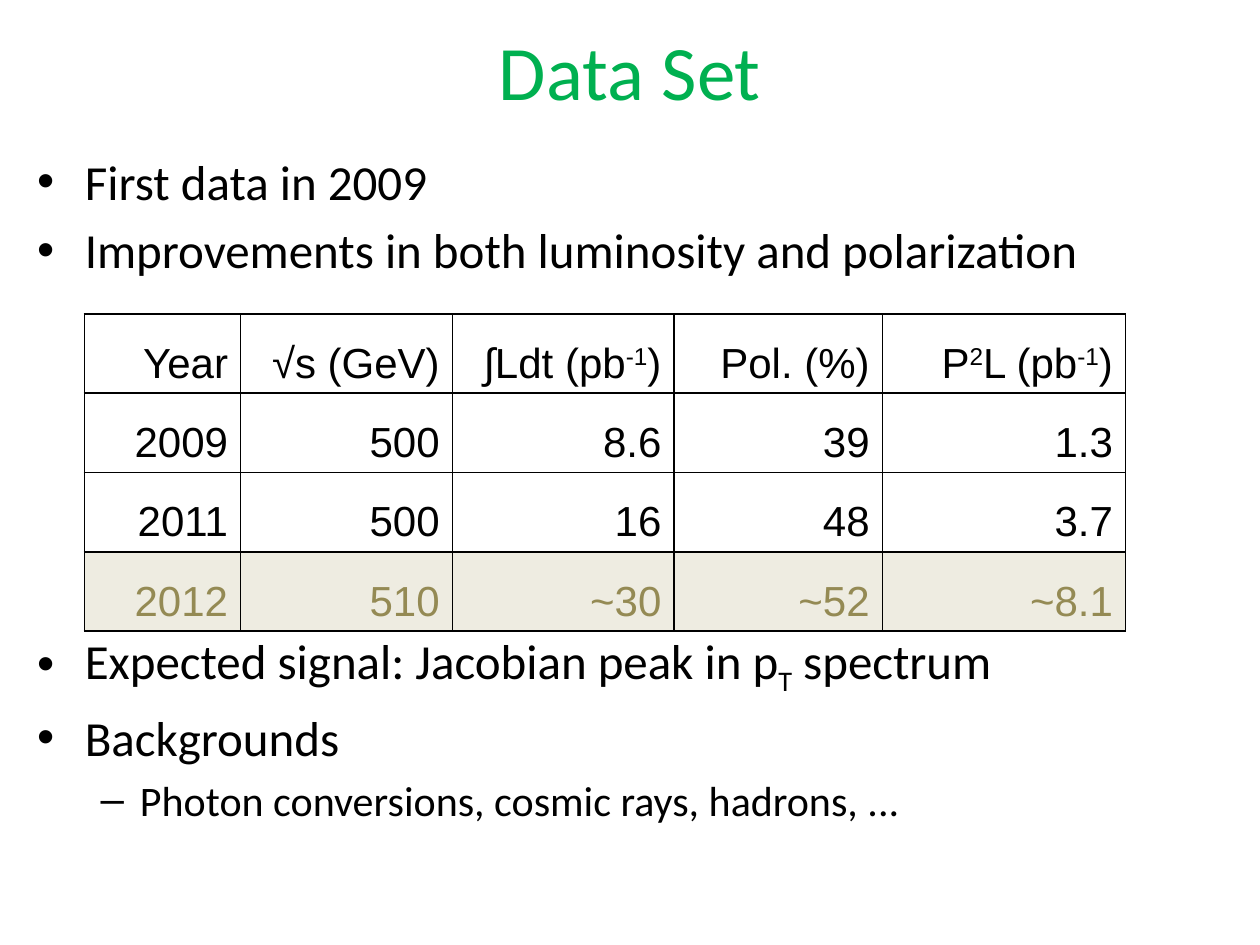
"""Build the Data Set slide: title, bullet list and luminosity table."""
import lxml.etree
import pptx
import pptx.dml.color
import pptx.enum.text
import pptx.oxml.ns
import pptx.util

Pt = pptx.util.Pt
ALIGN = pptx.enum.text.PP_ALIGN
ANCHOR = pptx.enum.text.MSO_ANCHOR


def rgb(value):
    return pptx.dml.color.RGBColor.from_string(value)


def write(paragraph, pieces, color, **formats):
    for piece in pieces:
        text, baseline = piece if isinstance(piece, tuple) else (piece, 0)
        run = paragraph.add_run()
        run.text = text
        for name, value in formats.items():
            setattr(run.font, name, value)
        run.font.color.rgb = rgb(color)
        if baseline:
            run._r.get_or_add_rPr().set("baseline", str(baseline * 1000))


qn = pptx.oxml.ns.qn
deck = pptx.Presentation()
deck.slide_width, deck.slide_height = Pt(720), Pt(540)
slide = deck.slides.add_slide(deck.slide_layouts[6])

heading = slide.shapes.add_textbox(Pt(36), Pt(3.6), Pt(648), Pt(72.7)).text_frame
for name, value in {"word_wrap": True, "vertical_anchor": ANCHOR.MIDDLE}.items():
    setattr(heading, name, value)
heading.paragraphs[0].alignment = ALIGN.CENTER
write(heading.paragraphs[0], ["Data Set"], "00B050", name="Calibri", size=Pt(44))

points = slide.shapes.add_textbox(Pt(14.4), Pt(82.8), Pt(669.6), Pt(448)).text_frame
points.word_wrap = True
levels = [
    {"mark": "•", "size": 28, "left": 27, "hang": 27},
    {"mark": "–", "size": 24, "left": 58.5, "hang": 22.5},
]
TABLE_GAP = 201
bullets = [
    (0, 0, ["First data in 2009"]),
    (0, 5.6, ["Improvements in both luminosity and polarization"]),
    (0, TABLE_GAP, ["Expected signal: Jacobian peak in p", ("T", -25), " spectrum"]),
    (0, 5.6, ["Backgrounds"]),
    (1, 4.8, ["Photon conversions, cosmic rays, hadrons, ..."]),
]
for index, (level, gap, pieces) in enumerate(bullets):
    point = points.add_paragraph() if index else points.paragraphs[0]
    look = levels[level]
    point.level = level
    properties = point._p.get_or_add_pPr()
    properties.set("marL", str(Pt(look["left"])))
    properties.set("indent", str(-Pt(look["hang"])))
    lxml.etree.SubElement(properties, qn("a:buFont")).set("typeface", "Arial")
    lxml.etree.SubElement(properties, qn("a:buChar")).set("char", look["mark"])
    point.space_before = Pt(gap)
    write(point, pieces, "000000", name="Calibri", size=Pt(look["size"]))

rows = [
    (["Year"], ["√s (GeV)"], ["∫Ldt (pb", ("-1", 30), ")"], ["Pol. (%)"],
     ["P", ("2", 30), "L (pb", ("-1", 30), ")"]),
    (["2009"], ["500"], ["8.6"], ["39"], ["1.3"]),
    (["2011"], ["500"], ["16"], ["48"], ["3.7"]),
    (["2012"], ["510"], ["~30"], ["~52"], ["~8.1"]),
]
row_colors = [("FFFFFF", "000000")] * 3 + [("EEECE1", "948A54")]
widths = [89.3, 121, 126.7, 119, 139]
row_height = 45.36
runs_table = slide.shapes.add_table(
    len(rows), len(widths), Pt(48.2), Pt(179.3), Pt(sum(widths)), Pt(row_height * len(rows))
).table
runs_table.first_row = runs_table.horz_banding = False
for column, width in zip(runs_table.columns, widths):
    column.width = Pt(width)

cell_format = {"vertical_anchor": ANCHOR.BOTTOM}
for row, values, (fill, ink) in zip(runs_table.rows, rows, row_colors):
    row.height = Pt(row_height)
    for cell, pieces in zip(row.cells, values):
        for name, value in cell_format.items():
            setattr(cell, name, value)
        for side in ("lnL", "lnR", "lnT", "lnB"):
            border = lxml.etree.SubElement(cell._tc.get_or_add_tcPr(), qn("a:" + side))
            border.set("w", str(Pt(1)))
            paint = lxml.etree.SubElement(border, qn("a:solidFill"))
            lxml.etree.SubElement(paint, qn("a:srgbClr")).set("val", "000000")
        cell.fill.solid()
        cell.fill.fore_color.rgb = rgb(fill)
        entry = cell.text_frame.paragraphs[0]
        entry.alignment = ALIGN.RIGHT
        write(entry, pieces, ink, name="Arial", size=Pt(24))

deck.save("out.pptx")
